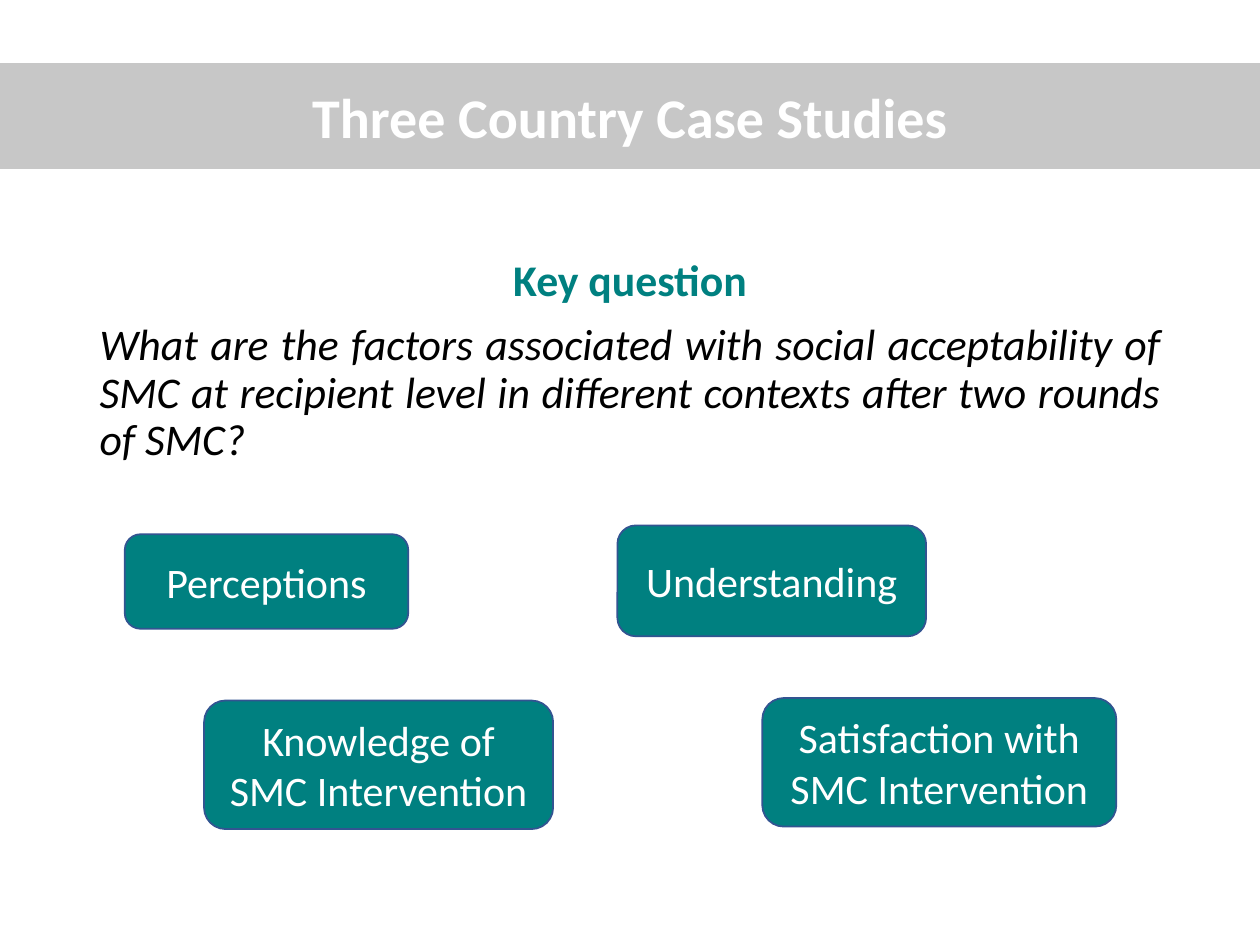
"""Build the slide on the key question of the three country case studies."""
from lxml import etree
from pptx import Presentation
from pptx import util as u
from pptx.dml.color import RGBColor
from pptx.enum import shapes, text
from pptx.oxml import ns

COLORS = {"teal": "008080", "outline": "325491", "band": "A6A6A6",
          "white": "FFFFFF", "black": "000000"}
FACTORS = [
    ("Perceptions", 0.99, 4.24, 2.25, 0.75),
    ("Understanding", 4.9, 4.17, 2.45, 0.88),
    ("Satisfaction with SMC Intervention", 6.05, 5.54, 2.81, 1.02),
    ("Knowledge of SMC Intervention", 1.62, 5.56, 2.77, 1.02),
]


def place(box, left, top, width, height):
    box.left, box.top = u.Inches(left), u.Inches(top)
    box.width, box.height = u.Inches(width), u.Inches(height)
    box.text_frame.word_wrap = True
    box.text_frame.auto_size = text.MSO_AUTO_SIZE.NONE


def style(para, size, color, align, bold=False, italic=False):
    para.alignment = align
    for span in para.runs:
        span.font.name = "Calibri"
        span.font.size = u.Pt(size)
        span.font.bold, span.font.italic = bold, italic
        span.font.color.rgb = RGBColor.from_string(COLORS[color])


deck = Presentation()
deck.slide_width, deck.slide_height = u.Inches(10), u.Inches(7.5)
page = deck.slides.add_slide(deck.slide_layouts[1])
title, body = page.placeholders

place(title, 0, 0.5, 10, 0.84)
title.fill.solid()
title.fill.fore_color.rgb = RGBColor.from_string(COLORS["band"])
band_color = title._element.spPr.find(".//" + ns.qn("a:srgbClr"))
etree.SubElement(band_color, ns.qn("a:alpha"), val="62000")
title.text_frame.text = "Three Country Case Studies"
title.text_frame.vertical_anchor = text.MSO_ANCHOR.MIDDLE
style(title.text_frame.paragraphs[0], 32, "white", text.PP_ALIGN.CENTER, bold=True)

place(body, 0.69, 2, 8.62, 1.8)
body.text_frame.text = (
    "Key question\n"
    "What are the factors associated with social acceptability of SMC "
    "at recipient level in different contexts after two rounds of SMC?"
)
question, answer = body.text_frame.paragraphs
for para, space in ((question, 0), (answer, 10)):
    props = para._p.get_or_add_pPr()
    props.set("marL", "0")
    props.set("indent", "0")
    etree.SubElement(props, ns.qn("a:buNone"))
    para.line_spacing = 0.9
    para.space_before = u.Pt(space)
style(question, 25, "teal", text.PP_ALIGN.CENTER, bold=True)
style(answer, 25, "black", text.PP_ALIGN.JUSTIFY, italic=True)

for label, *bounds in FACTORS:
    box = page.shapes.add_shape(shapes.MSO_SHAPE.ROUNDED_RECTANGLE, 0, 0, 0, 0)
    place(box, *bounds)
    box.shadow.inherit = False
    box.fill.solid()
    box.fill.fore_color.rgb = RGBColor.from_string(COLORS["teal"])
    box.line.color.rgb = RGBColor.from_string(COLORS["outline"])
    box.line.width = u.Pt(1)
    box.text_frame.text = label
    box.text_frame.vertical_anchor = text.MSO_ANCHOR.MIDDLE
    style(box.text_frame.paragraphs[0], 24, "white", text.PP_ALIGN.CENTER)

deck.save("out.pptx")
